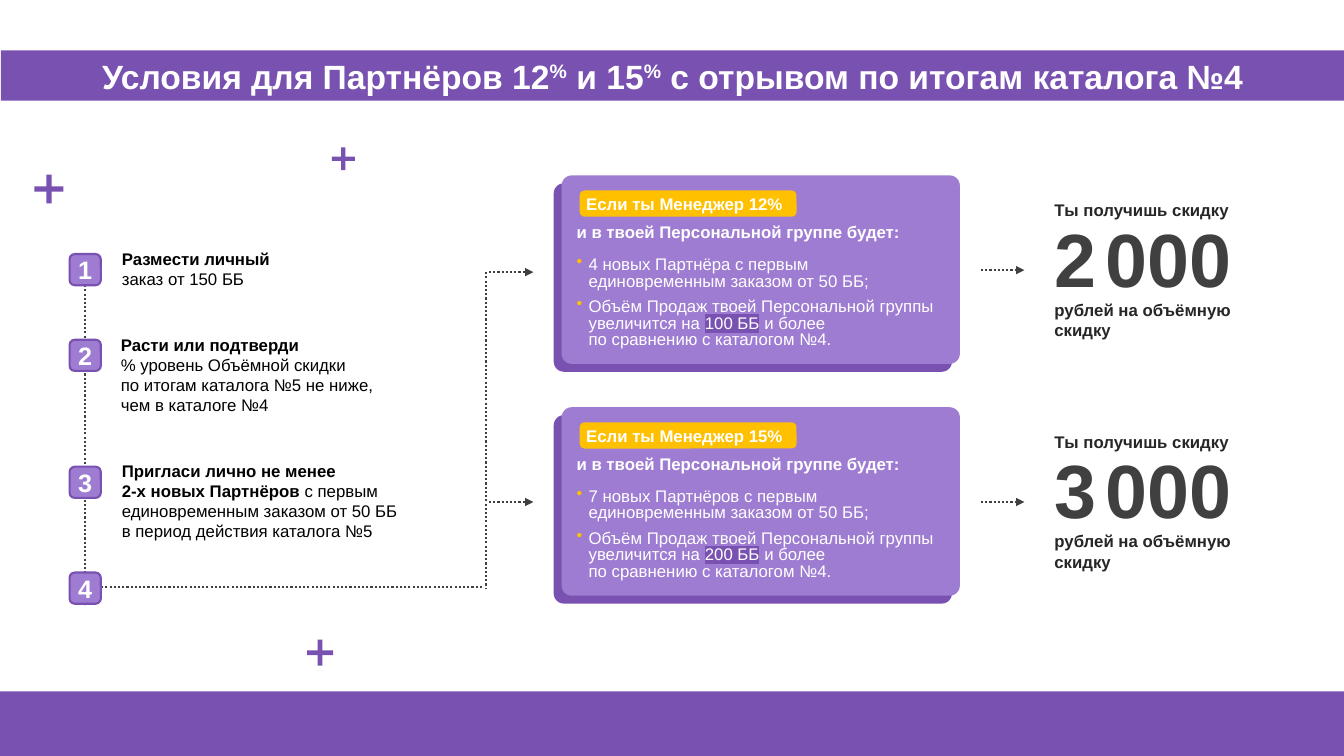
import pptx
import pptx.dml.color
import pptx.enum.dml
import pptx.enum.shapes
import pptx.enum.text
import pptx.oxml.ns
import pptx.util
from dataclasses import dataclass
from lxml import etree

Inches, Pt = pptx.util.Inches, pptx.util.Pt
Shape = pptx.enum.shapes.MSO_SHAPE
Align = pptx.enum.text.PP_ALIGN
Anchor = pptx.enum.text.MSO_ANCHOR


@dataclass(frozen=True)
class Theme:
    font: str = "Arial"
    purple: str = "7951B1"
    lilac: str = "9E7CD2"
    amber: str = "FFC000"
    white: str = "FFFFFF"
    black: str = "000000"
    ink: str = "262626"
    grey: str = "404040"
    title: float = 24
    badge: float = 18
    body: float = 12
    amount: float = 53.9
    amount_gap: float = 24
    line: float = 1.5


T = Theme()
STEPS = [
    (2.52, 1.11, 2.42, [("Размести личный\n", True), ("заказ от 150 ББ", False)]),
    (3.37, 1.1, 3.27, [("Расти или подтверди\n", True),
                       ("% уровень Объёмной скидки\nпо итогам каталога №5 не ниже,\n"
                        "чем в каталоге №4", False)]),
    (4.63, 1.11, 4.52, [("Пригласи лично не менее\n2-х новых Партнёров ", True),
                        ("с первым единовременным заказом от 50 ББ\n"
                         "в период действия каталога №5", False)]),
    (5.68, None, None, []),
]
OFFERS = [
    (1.74, "12%", "4 новых Партнёра", "100 ББ", "2"),
    (4.04, "15%", "7 новых Партнёров", "200 ББ", "3"),
]


def rgb(value):
    return pptx.dml.color.RGBColor.from_string(value)


def add_xml(parent, tag, **attrs):
    return etree.SubElement(parent, pptx.oxml.ns.qn(tag), attrs)


def add_block(s, kind, box, fill, adj=None, line=None):
    sp = s.shapes.add_shape(kind, *map(Inches, box))
    sp.shadow.inherit = False
    sp.fill.solid()
    sp.fill.fore_color.rgb = rgb(fill)
    if line:
        sp.line.color.rgb = rgb(line)
        sp.line.width = Pt(T.line)
    else:
        sp.line.fill.background()
    if adj is not None:
        sp.adjustments[0] = adj
    return sp


def style(p, size, color, bold=None):
    p.font.name = T.font
    p.font.size = Pt(size)
    p.font.color.rgb = rgb(color)
    p.font.bold = bold


def add_runs(p, text):
    """Add text to the paragraph, with a line break at each newline; return the last run."""
    r = None
    for i, part in enumerate(text.split("\n")):
        if i:
            p.add_line_break()
        if part:
            r = p.add_run()
            r.text = part
    return r


def add_label(sp, text, size, align, inset=0):
    tf = sp.text_frame
    tf.word_wrap = False
    tf.margin_left = tf.margin_right = Inches(inset)
    tf.margin_top = tf.margin_bottom = 0
    tf.vertical_anchor = Anchor.MIDDLE
    p = tf.paragraphs[0]
    p.alignment = align
    style(p, size, T.white, True)
    add_runs(p, text)


def add_textbox(s, box):
    tf = s.shapes.add_textbox(*map(Inches, box)).text_frame
    tf.word_wrap = True
    return tf


def add_text(s, box, text, color, size=T.body):
    p = add_textbox(s, box).paragraphs[0]
    style(p, size, color, True)
    add_runs(p, text)
    return p


def add_dotted(s, x1, y1, x2, y2, arrow=False):
    c = s.shapes.add_connector(pptx.enum.shapes.MSO_CONNECTOR.STRAIGHT,
                               *map(Inches, (x1, y1, x2, y2)))
    c.line.color.rgb = rgb(T.grey)
    c.line.width = Pt(T.line)
    c.line.dash_style = pptx.enum.dml.MSO_LINE.ROUND_DOT
    if arrow:
        add_xml(c.line._get_or_add_ln(), "a:tailEnd", type="triangle")
    add_xml(c._element.spPr, "a:effectLst")


def add_title(s, box):
    sp = add_block(s, Shape.RECTANGLE, box, T.purple)
    add_label(sp, "Условия для Партнёров 12", T.title, Align.CENTER)
    p = sp.text_frame.paragraphs[0]
    for text in (" и 15", " с отрывом по итогам каталога №4"):
        percent = add_runs(p, "%")
        percent._r.get_or_add_rPr().set("baseline", "30000")
        add_runs(p, text)


def add_steps(s, left):
    side = 0.31
    middle = left + side / 2
    add_dotted(s, middle, 2.62, middle, 6)
    for number, (top, text_left, text_top, parts) in enumerate(STEPS, 1):
        sp = add_block(s, Shape.ROUNDED_RECTANGLE, (left, top, side, side), T.lilac, line=T.purple)
        add_label(sp, str(number), T.badge, Align.CENTER)
        if parts:
            p = add_textbox(s, (text_left, text_top, 3.19, 0.91)).paragraphs[0]
            style(p, T.body, T.black)
            for text, bold in parts:
                first = len(p.runs)
                add_runs(p, text)
                for r in p.runs[first:]:
                    r.font.bold = bold


def add_branches(s, left):
    add_dotted(s, left - 0.04, 5.82, 0.99, 5.82)
    add_dotted(s, left, 2.7, left, 5.84)
    for y in (2.7, 4.98):
        add_dotted(s, left + 0.03, y, left + 0.47, y, arrow=True)


def add_conditions(s, box, first, volume):
    tf = add_textbox(s, box)
    for i, parts in enumerate([
        (f"{first} с первым единовременным заказом от 50 ББ;",),
        ("Объём Продаж твоей Персональной группы увеличится на ", volume,
         " и более\nпо сравнению с каталогом №4."),
    ]):
        p = tf.add_paragraph() if i else tf.paragraphs[0]
        p.line_spacing = Pt(12)
        p.space_before = Pt(6 * i)
        pPr = p._p.get_or_add_pPr()
        pPr.set("marL", str(Inches(0.12)))
        pPr.set("indent", str(Inches(-0.12)))
        add_xml(add_xml(pPr, "a:buClr"), "a:srgbClr", val=T.amber)
        add_xml(pPr, "a:buChar", char="•")
        style(p, T.body, T.white)
        for text in parts:
            r = add_runs(p, text)
            if text == volume:
                highlight = add_xml(r._r.get_or_add_rPr(), "a:highlight")
                add_xml(highlight, "a:srgbClr", val=T.purple)


def add_card(s, left, top, level, first, volume):
    card = add_block(s, Shape.ROUNDED_RECTANGLE, (left, top, 3.95, 1.87), T.lilac, 0.054)
    effects = card._element.spPr.find(pptx.oxml.ns.qn("a:effectLst"))
    shadow = add_xml(effects, "a:outerShdw", blurRad="0", dist=str(Pt(8)),
                     dir=str(135 * 60000), algn="tr", rotWithShape="0")
    add_xml(shadow, "a:srgbClr", val=T.purple)
    tag = add_block(s, Shape.ROUNDED_RECTANGLE, (left + 0.18, top + 0.15, 2.15, 0.26), T.amber, 0.181)
    add_label(tag, f"Если ты Менеджер {level}", T.body, Align.LEFT, 0.05)
    add_text(s, (left + 0.05, top + 0.41, 3.51, 0.3),
             "и в твоей Персональной группе будет:", T.white)
    add_conditions(s, (left + 0.05, top + 0.76, 3.87, 1.03), first, volume)


def add_discount(s, left, top, thousands):
    add_text(s, (left, top, 2.16, 0.3), "Ты получишь скидку", T.ink)
    p = add_text(s, (left, top + 0.12, 2.16, 1.01), thousands, T.grey, T.amount)
    add_runs(p, " ").font.size = Pt(T.amount_gap)
    add_runs(p, "000")
    add_text(s, (left, top + 0.99, 2.16, 0.5), "рублей на объёмную\nскидку", T.ink)


def main():
    prs = pptx.Presentation()
    prs.slide_width, prs.slide_height = Inches(13.33), Inches(7.5)
    s = prs.slides.add_slide(prs.slide_layouts[6])
    add_block(s, Shape.RECTANGLE, (0, 6.86, 13.33, 0.64), T.purple)
    for left, top, side in ((0.29, 1.68, 0.39), (3.25, 1.42, 0.31), (3, 6.3, 0.35)):
        add_block(s, Shape.MATH_PLUS, (left, top, side, side), T.purple, 0.134)
    add_title(s, (0.01, 0.5, 13.32, 0.5))
    add_branches(s, 4.82)
    add_steps(s, 0.69)
    for top, level, first, volume, thousands in OFFERS:
        add_card(s, 5.57, top, level, first, volume)
        add_dotted(s, 9.73, top + 0.94, 10.16, top + 0.94, arrow=True)
        add_discount(s, 10.36, top + 0.19, thousands)
    prs.save("out.pptx")


if __name__ == "__main__":
    main()
